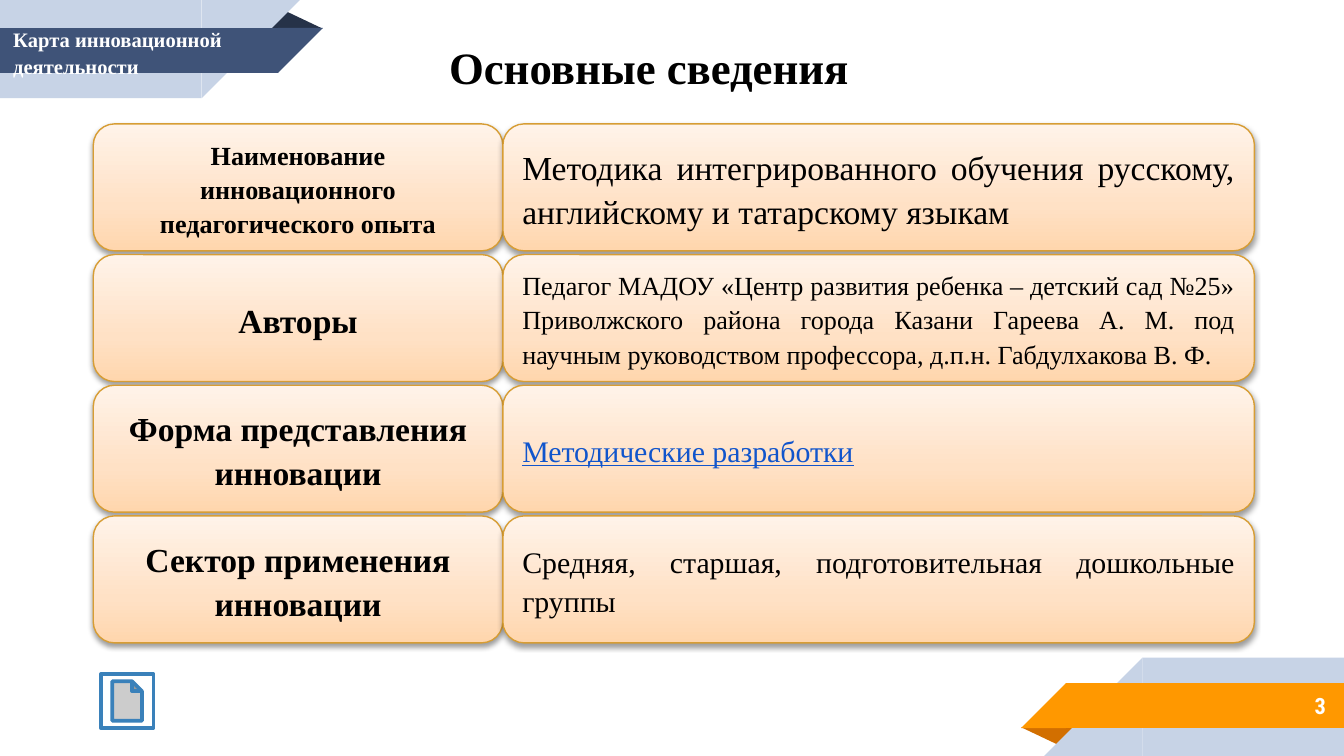
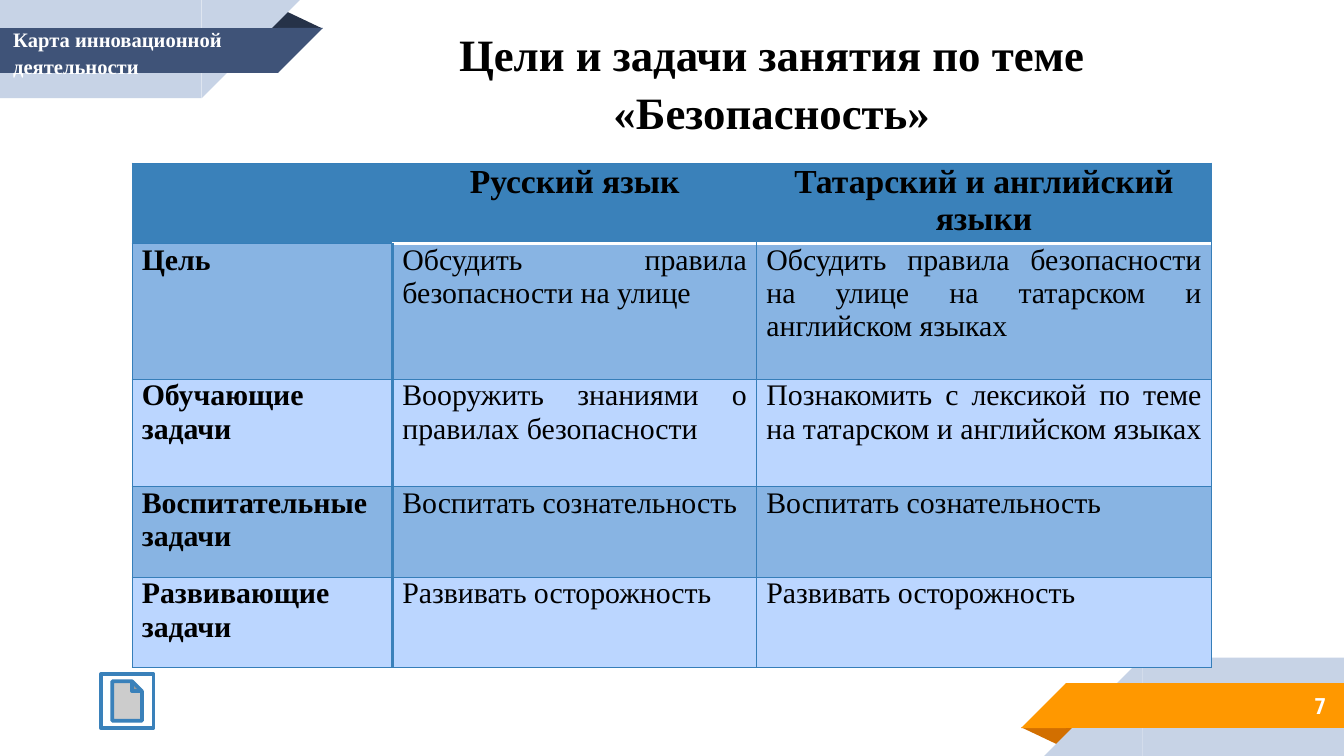
from lxml import etree
from pptx import Presentation
from pptx.dml.color import RGBColor
from pptx.enum import shapes, text
from pptx.oxml import parse_xml
from pptx.oxml.ns import nsdecls, qn
from pptx.util import Pt

FORM = shapes.MSO_SHAPE
ALIGN = text.PP_ALIGN
ANCHOR = text.MSO_ANCHOR

WIDTH, HEIGHT = 720, 405
SERIF, NARROW = "Times New Roman", "Roboto Condensed"
BLACK, WHITE, LINK = "000000", "FFFFFF", "1155CC"
PALE, ORANGE, RUST, NAVY, INK = "C7D3E6", "FF9800", "D26F00", "3F5378", "263248"
BLUE, GRID, BAND_DARK, BAND_LIGHT = "3A81BA", "367EB9", "88B4E3", "BBD6FF"
GOLD = "D79D34"
PEACH = [(0, "FFD6AD"), (35, "FFE1C5"), (100, "FFF3E9")]

FACTS = [
    ("Наименование инновационного педагогического опыта", 14,
     "Методика интегрированного обучения русскому, английскому и татарскому языкам", 18, BLACK),
    ("Авторы", 18,
     "Педагог МАДОУ «Центр развития ребенка – детский сад №25» Приволжского района города "
     "Казани Гареева А. М. под научным руководством профессора, д.п.н. Габдулхакова В. Ф.",
     14, BLACK),
    ("Форма представления инновации", 18, "Методические разработки", 16, LINK),
    ("Сектор применения инновации", 18,
     "Средняя, старшая, подготовительная дошкольные группы", 16, BLACK),
]
GOALS = [
    ("", "Русский язык", "Татарский и английский языки"),
    ("Цель", "Обсудить правила безопасности на улице",
     "Обсудить правила безопасности на улице на татарском и английском языках"),
    ("Обучающие задачи", "Вооружить знаниями о правилах безопасности",
     "Познакомить с лексикой по теме на татарском и английском языках"),
    ("Воспитательные задачи", "Воспитать сознательность", "Воспитать сознательность"),
    ("Развивающие задачи", "Развивать осторожность", "Развивать осторожность"),
]


def color(value):
    return RGBColor.from_string(value)


class Deck:
    """Holds the shared style and the current slide."""

    def __init__(self):
        self.deck = Presentation()
        self.deck.slide_width, self.deck.slide_height = Pt(WIDTH), Pt(HEIGHT)
        self.page = None

    def add_page(self, number, title, title_left, title_top, title_height):
        self.page = self.deck.slides.add_slide(self.deck.slide_layouts[6])
        self.ribbon(ORANGE, RUST, False)
        self.ribbon(NAVY, INK, True)
        self.label(600, 365, 117.4, 25.2, [str(number)], 12, WHITE, ALIGN.RIGHT,
                   NARROW, ANCHOR.MIDDLE, 7.2)
        self.label(0, 10, 236, 34, ["Карта инновационной", "деятельности"], 11, WHITE)
        self.label(title_left, title_top, 504, title_height, [title], 24, BLACK, ALIGN.CENTER)
        self.shape(FORM.ACTION_BUTTON_DOCUMENT, 54, 361.2, 28.2, 28.8, WHITE, BLUE, 2)

    def shape(self, form, left, top, width, height, fill=None, line=None, weight=0.75):
        shape = self.page.shapes.add_shape(form, Pt(left), Pt(top), Pt(width), Pt(height))
        shape.shadow.inherit = False
        if fill:
            shape.fill.solid()
            shape.fill.fore_color.rgb = color(fill)
        if line:
            shape.line.color.rgb = color(line)
            shape.line.width = Pt(weight)
        else:
            shape.line.fill.background()
        return shape

    def ribbon(self, main, fold, turned):
        parts = [
            (FORM.ISOSCELES_TRIANGLE, 547, 389.6, 31, 10, fold),
            (FORM.RECTANGLE, 612, 352.4, 108, 52.6, PALE),
            (FORM.RIGHT_TRIANGLE, 559.4, 352.4, 52.6, 52.6, PALE),
            (FORM.RECTANGLE, 571, 366, 149, 24, main),
            (FORM.RIGHT_TRIANGLE, 547, 366, 24, 24, main),
        ]
        for form, left, top, width, height, fill in parts:
            if turned:
                left, top = WIDTH - left - width, HEIGHT - top - height
            piece = self.shape(form, left, top, width, height, fill)
            is_fold = form == FORM.ISOSCELES_TRIANGLE
            if is_fold:
                piece.adjustments[0] = 0.32
            else:
                piece._element.spPr.xfrm.set("flipH", "1")
            piece.rotation = 180 if turned != is_fold else 0

    def fill_text(self, frame, lines, size, ink, align, bold, font=SERIF, spacing=None):
        for index, line in enumerate(lines):
            para = frame.add_paragraph() if index else frame.paragraphs[0]
            para.add_run().text = line
            para.alignment = align
            if spacing:
                para.line_spacing = spacing
            para.font.name, para.font.size, para.font.bold = font, Pt(size), bold
            para.font.color.rgb = color(ink)
            if ink == LINK:
                para.font.underline = True

    def label(self, left, top, width, height, lines, size, ink, align=ALIGN.LEFT,
              font=SERIF, anchor=ANCHOR.TOP, inset=3.6):
        box = self.page.shapes.add_textbox(Pt(left), Pt(top), Pt(width), Pt(height))
        frame = box.text_frame
        frame.word_wrap = True
        frame.vertical_anchor = anchor
        frame.margin_top = frame.margin_bottom = Pt(inset)
        self.fill_text(frame, lines, size, ink, align, True, font, 1.09)

    def card(self, left, top, width, height, line, size, ink, align, bold):
        card = self.shape(FORM.ROUNDED_RECTANGLE, left, top, width, height, WHITE, GOLD)
        properties = card._element.spPr
        stops = "".join(f'<a:gs pos="{place * 1000}"><a:srgbClr val="{tint}"/></a:gs>'
                        for place, tint in PEACH)
        gradient = parse_xml(f'<a:gradFill {nsdecls("a")} rotWithShape="1"><a:gsLst>{stops}'
                             '</a:gsLst><a:lin ang="16200000" scaled="0"/></a:gradFill>')
        properties.replace(properties.find(qn("a:solidFill")), gradient)
        shadow = etree.SubElement(properties.find(qn("a:effectLst")), qn("a:outerShdw"),
                                  blurRad=str(Pt(3.1)), dist=str(Pt(1.6)), dir="5400000",
                                  rotWithShape="0")
        tint = etree.SubElement(shadow, qn("a:srgbClr"), val=BLACK)
        etree.SubElement(tint, qn("a:alpha"), val="38000")
        frame = card.text_frame
        frame.word_wrap = True
        frame.vertical_anchor = ANCHOR.MIDDLE
        self.fill_text(frame, [line], size, ink, align, bold, spacing=1.09)

    def borders(self, cell, sides):
        properties = cell._tc.get_or_add_tcPr()
        for index, side in enumerate("LRTB"):
            tint, weight = sides.get(side, (GRID, 0.75))
            properties.insert(index, parse_xml(
                f'<a:ln{side} {nsdecls("a")} w="{Pt(weight)}"><a:solidFill>'
                f'<a:srgbClr val="{tint}"/></a:solidFill></a:ln{side}>'))

    def table(self, left, top, widths, heights, rows):
        holder = self.page.shapes.add_table(len(rows), len(widths), Pt(left), Pt(top),
                                            Pt(sum(widths)), Pt(sum(heights)))
        table = holder.table
        table.first_row = table.horz_banding = False
        for column, width in zip(table.columns, widths):
            column.width = Pt(width)
        for row, height in zip(table.rows, heights):
            row.height = Pt(height)
        for r, row in enumerate(rows):
            for c, line in enumerate(row):
                cell = table.cell(r, c)
                cell.margin_left = cell.margin_right = Pt(5.2)
                cell.margin_top = cell.margin_bottom = 0
                cell.fill.solid()
                fill = BLUE if r == 0 else BAND_DARK if r % 2 else BAND_LIGHT
                cell.fill.fore_color.rgb = color(fill)
                sides = {}
                if r == 0:
                    sides = {"B": (WHITE, 2), "L": (BLUE, 0.75), "R": (BLUE, 0.75)}
                    if c == 0:
                        sides["B"] = (GRID, 0.75)
                elif c == 0:
                    sides["R"] = (BLUE, 2)
                else:
                    if r == 1:
                        sides["T"] = (WHITE, 2)
                    if c == 1:
                        sides["L"] = (BLUE, 2)
                self.borders(cell, sides)
                if line:
                    self.fill_text(cell.text_frame, [line], 16 if r else 18, BLACK,
                                   ALIGN.JUSTIFY if r else ALIGN.CENTER, r == 0 or c == 0)


def main():
    deck = Deck()
    deck.add_page(3, "Основные сведения", 95.6, 15, 36)
    for index, (name, name_size, value, value_size, ink) in enumerate(FACTS):
        top = 66.4 + 70 * index
        deck.card(50, top, 219.4, 68, name, name_size, BLACK, ALIGN.CENTER, True)
        deck.card(269.4, top, 402.6, 68, value, value_size, ink, ALIGN.JUSTIFY, False)

    deck.add_page(7, "Цели и задачи занятия по теме «Безопасность»", 161.4, 8, 65.4)
    deck.table(70.8, 87.4, [139.6, 195, 243.6], [43, 72.6, 57.6, 48.4, 48.4], GOALS)
    deck.deck.save("out.pptx")


if __name__ == "__main__":
    main()
